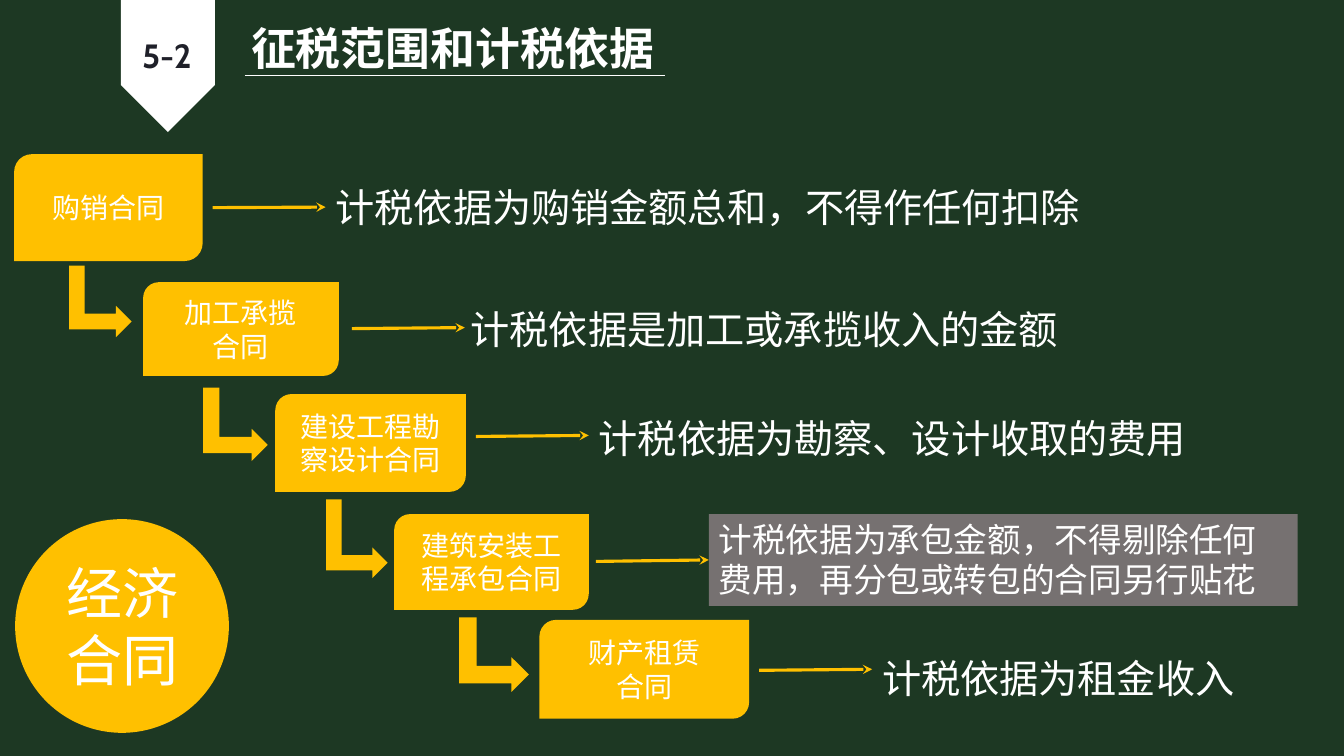
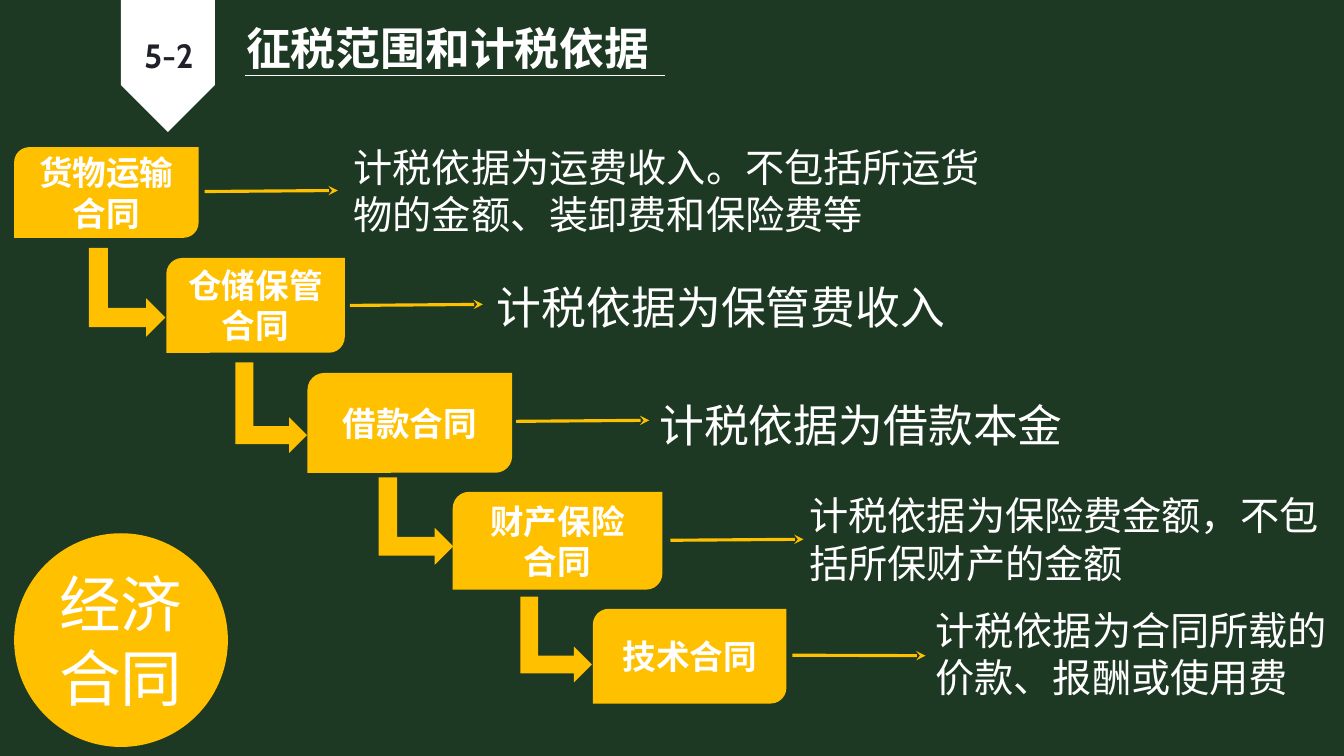
from lxml import etree
from pptx import Presentation
from pptx.dml.color import RGBColor
from pptx.enum.shapes import MSO_CONNECTOR, MSO_SHAPE
from pptx.enum.text import MSO_ANCHOR, MSO_AUTO_SIZE, PP_ALIGN
from pptx.oxml.ns import qn
from pptx.util import Emu, Pt

PX = 9144  # 100 px to the inch
GREEN, GOLD, GREY, WHITE, INK = "1D3823", "FFC000", "767171", "FFFFFF", "1F2029"
CABIN, CJK = "Cabin", "Noto Sans CJK SC"
CARD, ELBOW = MSO_SHAPE.ROUNDED_RECTANGLE, MSO_SHAPE.BENT_UP_ARROW
CARD = MSO_SHAPE.ROUND_2_DIAG_RECTANGLE
PENTAGON, OVAL, RECT = MSO_SHAPE.PENTAGON, MSO_SHAPE.OVAL, MSO_SHAPE.RECTANGLE
STRAIGHT = MSO_CONNECTOR.STRAIGHT
TOP, MIDDLE = MSO_ANCHOR.TOP, MSO_ANCHOR.MIDDLE
LEFT, CENTER = PP_ALIGN.LEFT, PP_ALIGN.CENTER
NO_FIT = MSO_AUTO_SIZE.NONE

# Content; boxes are left, top, width, height
TITLE, TAG, CIRCLE = "征税范围和计税依据", "5-2", "经济合同"
SLIDES = [
    dict(
        title=(239, 27, 437, 42), tag=(131, 34, 80, 46),
        circle=(15, 515, 212, 212), circle_size=40,
        label=dict(size=20, bold=False), arrow_length=112,
        # label, its box, arrow start, basis, its box, size, fill
        rows=[
            ("购销合同", (14, 153, 187, 106), (211, 206),
             "计税依据为购销金额总和，不得作任何扣除", (323, 177, 766, 57), 28, None),
            ("加工承揽\n合同", (142, 280, 194, 93), (349, 326),
             "计税依据是加工或承揽收入的金额", (457, 298, 609, 57), 28, None),
            ("建设工程勘察设计合同", (273, 391, 189, 97), (472, 433),
             "计税依据为勘察、设计收取的费用", (584, 406, 609, 57), 28, None),
            ("建筑安装工程承包合同", (391, 510, 193, 95), (591, 557),
             "计税依据为承包金额，不得剔除任何费用，再分包或转包的合同另行贴花",
             (703, 510, 584, 91), 24, GREY),
            ("财产租赁\n合同", (535, 615, 208, 98), (753, 665),
             "计税依据为租金收入", (865, 644, 374, 57), 28, None),
        ],
        elbows=[(64, 268, 71, 62), (197, 389, 73, 64),
                (315, 504, 78, 61), (453, 615, 74, 69)],
    ),
    dict(
        title=(234, 27, 431, 42), tag=(133, 34, 77, 46),
        circle=(14, 529, 212, 212), circle_size=44,
        label=dict(size=24, bold=True), arrow_length=132,
        rows=[
            ("货物运输合同", (14, 146, 183, 90), (203, 190),
             "计税依据为运费收入。不包括所运货物的金额、装卸费和保险费等",
             (341, 137, 667, 104), 28, None),
            ("仓储保管合同", (165, 256, 177, 94), (347, 303),
             "计税依据为保管费收入", (483, 273, 469, 64), 32, None),
            ("借款合同", (305, 370, 203, 99), (512, 418),
             "计税依据为借款本金", (644, 390, 424, 64), 32, None),
            ("财产保险\n合同", (449, 488, 208, 97), (665, 536),
             "计税依据为保险费金额，不包括所保财产的金额", (793, 483, 540, 104), 28, None),
            ("技术合同", (588, 604, 192, 94), (786, 650),
             "计税依据为合同所载的价款、报酬或使用费", (918, 597, 424, 107), 28, None),
        ],
        elbows=[(82, 252, 88, 76), (224, 369, 90, 71),
                (369, 480, 87, 74), (509, 599, 85, 71)],
    ),
]


def rgb(value):
    return RGBColor.from_string(value)


def emu(*lengths):
    return [Emu(n * PX) for n in lengths]


def write(shape, text, size, font=CABIN, color=WHITE, bold=False,
          align=LEFT, anchor=TOP, **paragraph):
    tf = shape.text_frame
    tf.text = text
    frame = dict(word_wrap=True, auto_size=NO_FIT, vertical_anchor=anchor)
    for name, value in frame.items():
        setattr(tf, name, value)
    for p in tf.paragraphs:
        for name, value in dict(alignment=align, **paragraph).items():
            setattr(p, name, value)
        for r in p.runs:
            for name, value in dict(size=Pt(size), bold=bold, name=font).items():
                setattr(r.font, name, value)
            r.font.color.rgb = rgb(color)
            ea = etree.SubElement(r.font._element, qn("a:ea"))
            ea.set("typeface", font)


def add_block(s, kind, box, fill, rotation=0):
    sp = s.shapes.add_shape(kind, *emu(*box))
    sp.shadow.inherit = False
    sp.fill.solid()
    sp.fill.fore_color.rgb = rgb(fill)
    sp.line.fill.background()
    sp.rotation = rotation
    return sp


def add_line(s, start, end, color, width, arrow=False):
    line = s.shapes.add_connector(STRAIGHT, *emu(*start, *end))
    line.line.color.rgb = rgb(color)
    line.line.width = Pt(width)
    if arrow:
        tail = etree.SubElement(line.line._get_or_add_ln(), qn("a:tailEnd"))
        tail.set("type", "stealth")
    etree.SubElement(line._element.spPr, qn("a:effectLst"))
    return line


def add_header(s, title_box, tag_box):
    add_block(s, PENTAGON, (101, 19, 131, 93), WHITE, 90)
    add_line(s, (243, 75), (660, 75), WHITE, 0.5)
    title, tag = s.shapes.title, s.placeholders[1]
    spacing = dict(line_spacing=0.9, space_before=Pt(10))
    for sp, box in ((title, title_box), (tag, tag_box)):
        sp.left, sp.top, sp.width, sp.height = emu(*box)
        s.shapes._spTree.append(sp._element)  # in front of the band
    title.text_frame.margin_top = 0
    write(title, TITLE, 32, bold=True, **spacing)
    write(tag, TAG, 24, color=INK, bold=True, anchor=MIDDLE, **spacing)


def add_row(s, row, label_format, arrow_length):
    label, card_box, (x, y), basis, basis_box, size, fill = row
    card = add_block(s, CARD, card_box, GOLD)
    write(card, label, font=CJK, align=CENTER, anchor=MIDDLE, **label_format)
    if fill:
        target = add_block(s, RECT, basis_box, fill)
    else:
        target = s.shapes.add_textbox(*emu(*basis_box))
    write(target, basis, size)
    end_x, end_y = x + arrow_length, y - 1
    arrow = add_line(s, (x, y), (end_x, end_y), GOLD, 2.25, arrow=True)
    left, top, _, height = basis_box
    if end_x == left and abs(end_y - top - height / 2) <= 2:
        arrow.end_connect(target, 1)


def main():
    prs = Presentation()
    prs.slide_width, prs.slide_height = emu(1333, 750)
    background = prs.slide_master.background.fill
    background.solid()
    background.fore_color.rgb = rgb(GREEN)
    for page in SLIDES:
        s = prs.slides.add_slide(prs.slide_layouts[2])
        add_header(s, page["title"], page["tag"])
        # Staircase of contracts
        for row in page["rows"]:
            add_row(s, row, page["label"], page["arrow_length"])
        for box in page["elbows"]:
            add_block(s, ELBOW, box, GOLD, 90)
        # Topic circle
        circle = add_block(s, OVAL, page["circle"], GOLD)
        write(circle, CIRCLE, page["circle_size"], align=CENTER, anchor=MIDDLE)
    prs.save("out.pptx")


if __name__ == "__main__":
    main()
